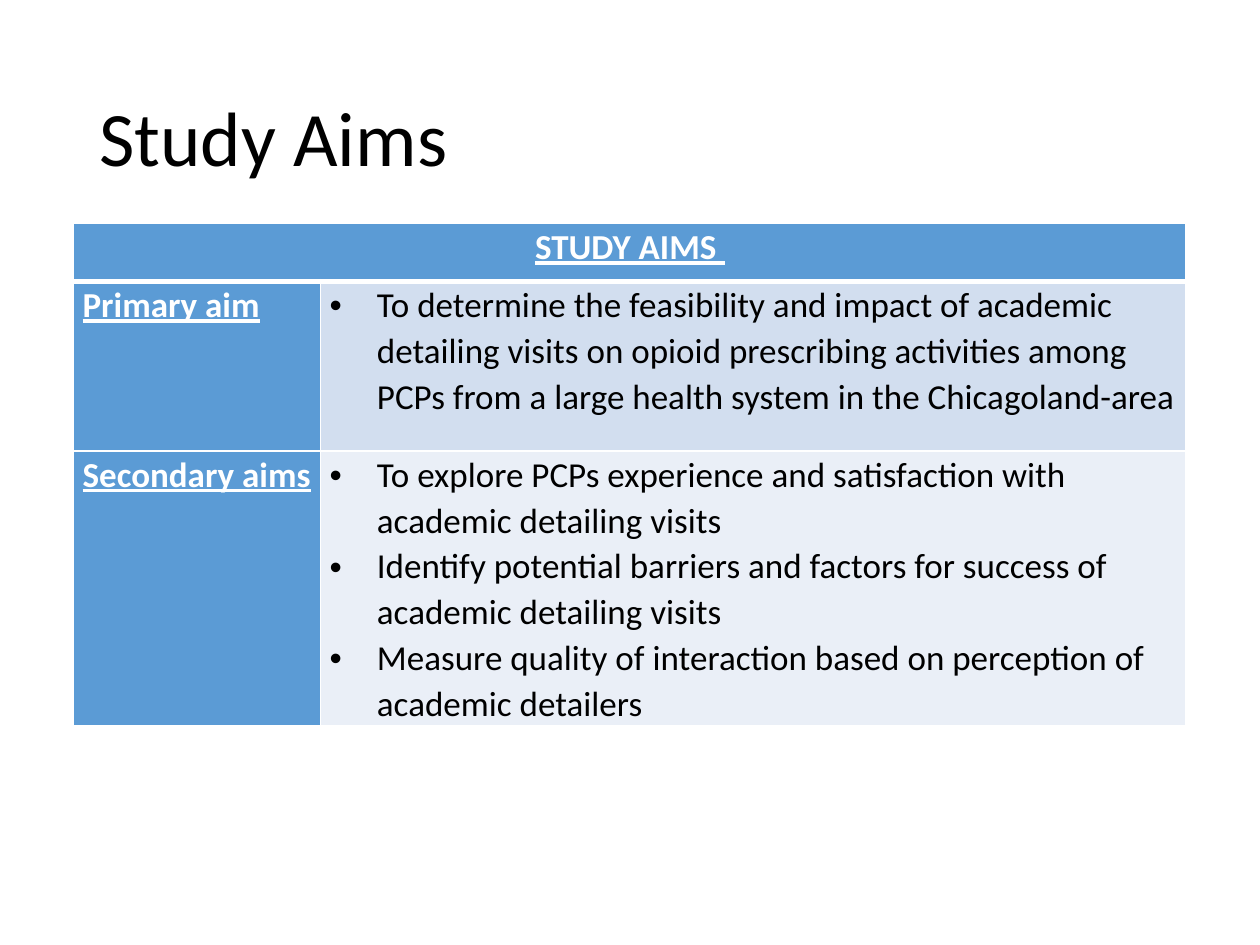
import pptx
import pptx.util
import pptx.dml.color
import pptx.enum.text
import pptx.oxml
import pptx.oxml.ns

Pt = pptx.util.Pt
ALIGN = pptx.enum.text.PP_ALIGN
FONT = "Calibri"
BLUE, WHITE, BLACK = "5B9BD5", "FFFFFF", "000000"

# Content
TITLE = "Study Aims"
HEAD = "STUDY AIMS "
AIMS = [
    ("Primary aim", "D2DEEF", [
        "To determine the feasibility and impact of academic detailing visits "
        "on opioid prescribing activities among PCPs from a large health "
        "system in the Chicagoland-area",
    ]),
    ("Secondary aims", "EAEFF7", [
        "To explore PCPs experience and satisfaction with academic detailing visits",
        "Identify potential barriers and factors for success of academic detailing visits",
        "Measure quality of interaction based on perception of academic detailers",
    ]),
]
COLS = [141.2, 494.6]
ROWS = [33.2, 97, 156]


def color(code):
    return pptx.dml.color.RGBColor.from_string(code)


def write(para, text, size, code, strong=False):
    run = para.add_run()
    run.text = text
    font = run.font
    font.name, font.size = FONT, Pt(size)
    font.bold = font.underline = strong
    font.color.rgb = color(code)


def bullet(para, indent):
    props = para._p.get_or_add_pPr()
    props.set("marL", str(Pt(indent)))
    props.set("indent", str(-Pt(indent)))
    for tag, key, val in (("buFont", "typeface", "Arial"), ("buChar", "char", "•")):
        props.append(pptx.oxml.parse_xml(
            f'<a:{tag} {pptx.oxml.ns.nsdecls("a")} {key}="{val}"/>'))


def style(cell, fill, top=1, base=1):
    cell.margin_left = cell.margin_right = Pt(5.2)
    cell.margin_top = cell.margin_bottom = 0
    props = cell._tc.get_or_add_tcPr()
    for side, wide in (("L", 1), ("R", 1), ("T", top), ("B", base)):
        props.append(pptx.oxml.parse_xml(
            f'<a:ln{side} {pptx.oxml.ns.nsdecls("a")} w="{Pt(wide)}">'
            f'<a:solidFill><a:srgbClr val="{WHITE}"/></a:solidFill></a:ln{side}>'))
    cell.fill.solid()
    cell.fill.fore_color.rgb = color(fill)


def fill_text(cell, lines, code, strong=False, listed=False, align=ALIGN.LEFT):
    frame = cell.text_frame
    for i, line in enumerate(lines):
        para = frame.add_paragraph() if i else frame.paragraphs[0]
        para.alignment = align
        para.line_spacing = 1.07
        para.space_after = Pt(0 if listed else 8)
        if listed:
            bullet(para, 27)
        write(para, line, 20, code, strong)


# Slide and title
deck = pptx.Presentation()
deck.slide_width, deck.slide_height = Pt(720), Pt(540)
slide = deck.slides.add_slide(deck.slide_layouts[5])
title = slide.shapes.title
title.left, title.top, title.width, title.height = Pt(49.5), Pt(28.8), Pt(621), Pt(104.4)
title.text_frame.vertical_anchor = pptx.enum.text.MSO_ANCHOR.MIDDLE
para = title.text_frame.paragraphs[0]
para.alignment, para.line_spacing = ALIGN.LEFT, 0.9
write(para, TITLE, 44, BLACK)

# Table grid
table = slide.shapes.add_table(
    len(ROWS), len(COLS), Pt(42), Pt(127.5), Pt(sum(COLS)), Pt(sum(ROWS))).table
for col, wide in zip(table.columns, COLS):
    col.width = Pt(wide)
for row, high in zip(table.rows, ROWS):
    row.height = Pt(high)

# Header across both columns
head = table.cell(0, 0)
head.merge(table.cell(0, 1))
for col in range(len(COLS)):
    style(table.cell(0, col), BLUE, base=3)
fill_text(head, [HEAD], WHITE, strong=True, align=ALIGN.CENTER)

# One row for each kind of aim
for i, (name, tint, goals) in enumerate(AIMS, 1):
    label, body = table.cell(i, 0), table.cell(i, 1)
    top = 3 if i == 1 else 1
    style(label, BLUE, top)
    style(body, tint, top)
    fill_text(label, [name], WHITE, strong=True)
    fill_text(body, goals, BLACK, listed=True)

deck.save("out.pptx")
